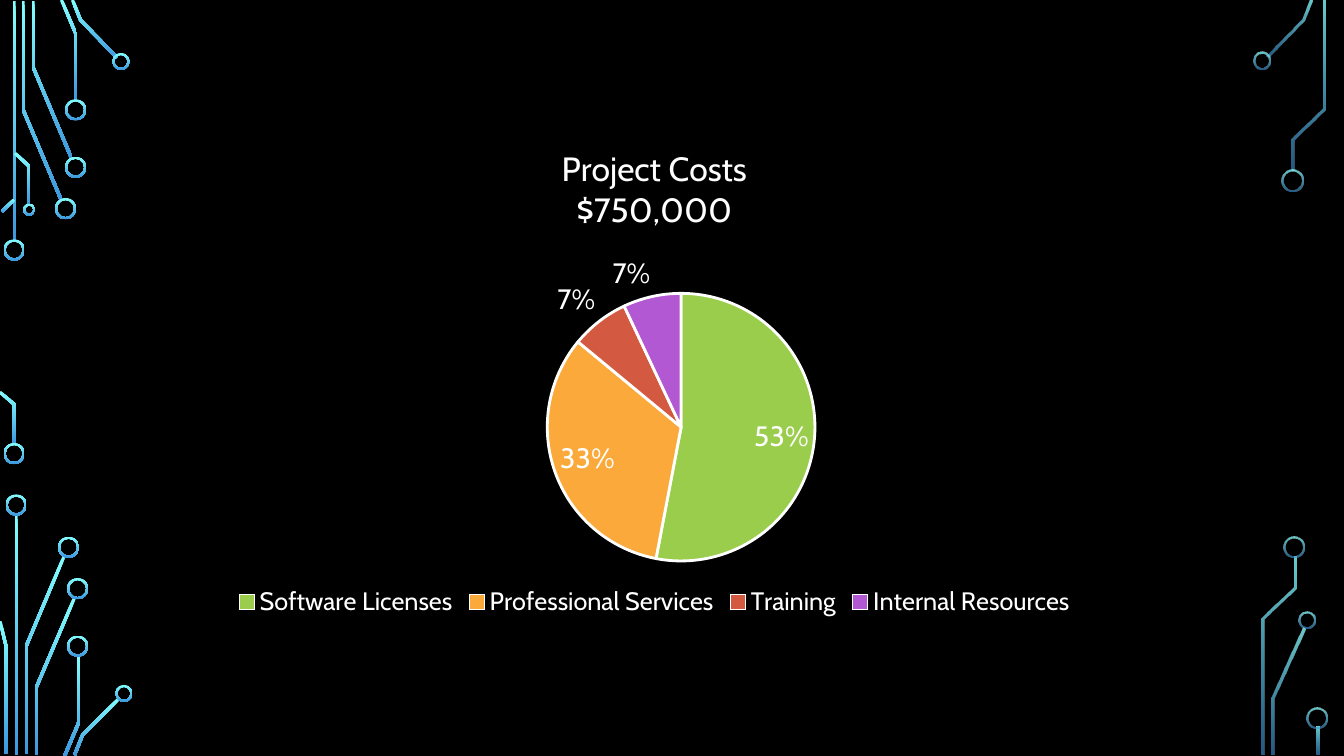
from math import hypot

from pptx import Presentation
from pptx.chart.data import CategoryChartData
from pptx.dml.color import RGBColor
from pptx.enum.chart import XL_CHART_TYPE, XL_LABEL_POSITION, XL_LEGEND_POSITION
from pptx.enum.shapes import MSO_SHAPE
from pptx.oxml import parse_xml
from pptx.oxml.ns import nsdecls, qn
from pptx.util import Inches, Pt

PIE = XL_CHART_TYPE.PIE
BEST_FIT = XL_LABEL_POSITION.BEST_FIT
BOTTOM = XL_LEGEND_POSITION.BOTTOM
DONUT = MSO_SHAPE.DONUT

BLACK = RGBColor(0x00, 0x00, 0x00)
WHITE = RGBColor(0xFF, 0xFF, 0xFF)
CYAN = RGBColor(0x82, 0xFF, 0xFF)
BLUE = RGBColor(0x3D, 0x97, 0xDE)
GREEN = RGBColor(0x9A, 0xCD, 0x4C)
ORANGE = RGBColor(0xFA, 0xA9, 0x3A)
RED = RGBColor(0xD3, 0x59, 0x40)
PURPLE = RGBColor(0xB2, 0x58, 0xD3)

FONT = "Cabin"
TRACE_WIDTH = 0.03
RING_WIDTH = 0.02
OPAQUE = (100, 100)
FADED = (80, 60)

COSTS = [
    ("Software Licenses", 0.53, GREEN),
    ("Professional Services", 0.33, ORANGE),
    ("Training", 0.07, RED),
    ("Internal Resources", 0.07, PURPLE),
]

LEFT_TRACES = [
    [(0.14, 0.01), (0.14, 2.4)],
    [(0.23, 0.01), (0.23, 1.09), (0.61, 1.99)],
    [(0.33, 0.01), (0.33, 0.67), (0.71, 1.57)],
    [(0.61, 0), (0.75, 0.33), (0.75, 1)],
    [(0.72, 0), (0.8, 0.2), (1.16, 0.57)],
    [(0.14, 1.98), (0.02, 2.1)],
    [(0, 3.89), (0.14, 4.01), (0.14, 4.41)],
    [(0.15, 1.52), (0.29, 1.65), (0.29, 2.03)],
    [(0.16, 5.1), (0.16, 7.49)],
    [(0.26, 7.48), (0.26, 6.41), (0.64, 5.51)],
    [(0.06, 7.48), (0.06, 6.41), (0, 6.16)],
    [(0.36, 7.49), (0.36, 6.82), (0.74, 5.93)],
    [(0.64, 7.5), (0.78, 7.17), (0.78, 6.5)],
    [(0.74, 7.49), (0.82, 7.29), (1.18, 6.93)],
]
LEFT_RINGS = [
    (0.14, 2.48, 0.21), (0.14, 4.5, 0.21), (0.65, 2.07, 0.21),
    (0.75, 1.66, 0.21), (0.75, 1.09, 0.21), (1.2, 0.61, 0.17),
    (0.29, 2.08, 0.12), (0.16, 5.01, 0.21), (0.68, 5.43, 0.21),
    (0.77, 5.84, 0.21), (0.77, 6.41, 0.21), (1.23, 6.88, 0.17),
]
RIGHT_TRACES = [
    [(12.57, 0.56), (12.92, 0.2), (13, 0)],
    [(12.63, 7.49), (12.63, 6.93), (12.93, 6.23)],
    [(12.82, 1.69), (12.82, 1.38), (13.13, 1.08), (13.13, 0.01)],
    [(12.53, 7.49), (12.53, 6.14), (12.84, 5.83), (12.84, 5.52)],
    [(13.07, 7.21), (13.07, 7.49)],
]
RIGHT_RINGS = [
    (12.52, 0.6, 0.17), (12.82, 1.79, 0.21), (12.96, 6.15, 0.17),
    (12.83, 5.43, 0.21), (13.06, 7.12, 0.21),
]


def set_font(font, size):
    values = {"name": FONT, "size": Pt(size), "bold": False}
    for name, value in values.items():
        setattr(font, name, value)
    font.color.rgb = WHITE


def paint(shape, opacities):
    shape.shadow.inherit = False
    shape.line.fill.background()
    shape.fill.gradient()
    shape.fill.gradient_angle = 270
    for stop, color, opacity in zip(shape.fill.gradient_stops, (CYAN, BLUE), opacities):
        stop.color.rgb = color
    if opacities != OPAQUE:
        colors = shape._element.spPr.iter(qn("a:srgbClr"))
        for color, opacity in zip(list(colors), opacities):
            color.append(parse_xml(f'<a:alpha {nsdecls("a")} val="{opacity * 1000}"/>'))


def edge_offsets(points):
    normals = []
    for (x1, y1), (x2, y2) in zip(points, points[1:]):
        length = hypot(x2 - x1, y2 - y1)
        normals.append(((y1 - y2) / length, (x2 - x1) / length))
    offsets = []
    for (ax, ay), (bx, by) in zip(normals[:1] + normals, normals + normals[-1:]):
        scale = TRACE_WIDTH / 2 / (1 + ax * bx + ay * by)
        offsets.append(((ax + bx) * scale, (ay + by) * scale))
    return offsets


def add_trace(slide, points, opacities):
    pairs = list(zip(points, edge_offsets(points)))
    outline = [(x + dx, y + dy) for (x, y), (dx, dy) in pairs]
    outline += [(x - dx, y - dy) for (x, y), (dx, dy) in reversed(pairs)]
    corners = [(Inches(x), Inches(y)) for x, y in outline]
    builder = slide.shapes.build_freeform(*corners[0], scale=1.0)
    builder.add_line_segments(corners[1:], close=True)
    paint(builder.convert_to_shape(), opacities)


def add_ring(slide, center_x, center_y, diameter, opacities):
    left, top = center_x - diameter / 2, center_y - diameter / 2
    size = Inches(diameter)
    shape = slide.shapes.add_shape(DONUT, Inches(left), Inches(top), size, size)
    shape.adjustments[0] = RING_WIDTH / diameter
    paint(shape, opacities)


def add_circuit(slide, traces, rings, opacities):
    for points in traces:
        add_trace(slide, points, opacities)
    for ring in rings:
        add_ring(slide, *ring, opacities)


def place_plot(chart, **fractions):
    modes = '<c:layoutTarget val="inner"/><c:xMode val="edge"/><c:yMode val="edge"/>'
    sizes = "".join(f'<c:{name} val="{value}"/>' for name, value in fractions.items())
    plot_area = chart._chartSpace.chart.plotArea
    for layout in plot_area.findall(qn("c:layout")):
        plot_area.remove(layout)
    plot_area.insert(0, parse_xml(
        f'<c:layout {nsdecls("c")}><c:manualLayout>{modes}{sizes}</c:manualLayout></c:layout>'))


def add_title(chart, lines):
    chart.has_title = True
    frame = chart.chart_title.text_frame
    frame.text = "\n".join(lines)
    for paragraph in frame.paragraphs:
        set_font(paragraph.font, 24)
        set_font(paragraph.runs[0].font, 24)
    chart.chart_title.include_in_layout = False


def add_cost_chart(slide):
    data = CategoryChartData(number_format="0%")
    data.categories = [name for name, _, _ in COSTS]
    data.add_series("Series 1", [share for _, share, _ in COSTS])
    chart = slide.shapes.add_chart(
        PIE, Inches(1.18), Inches(1.28), Inches(10.62), Inches(4.89), data).chart
    set_font(chart.font, 10)
    add_title(chart, ["Project Costs", "$750,000"])
    chart.has_legend = True
    chart.legend.position = BOTTOM
    chart.legend.include_in_layout = False
    set_font(chart.legend.font, 18)
    plot = chart.plots[0]
    plot.vary_by_categories = True
    series = plot.series[0]
    for index, (_, _, color) in enumerate(COSTS):
        slice_format = series.points[index].format
        slice_format.fill.solid()
        slice_format.fill.fore_color.rgb = color
        slice_format.line.color.rgb = WHITE
        slice_format.line.width = Pt(2)
    labels = series.data_labels
    values = {"show_value": True, "number_format": "0%",
              "number_format_is_linked": False, "position": BEST_FIT}
    for name, value in values.items():
        setattr(labels, name, value)
    set_font(labels.font, 20)
    place_plot(chart, x=0.4, y=0.33, w=0.25, h=0.55)


def main():
    presentation = Presentation()
    presentation.slide_width = Inches(13.33)
    presentation.slide_height = Inches(7.5)
    slide = presentation.slides.add_slide(presentation.slide_layouts[6])
    slide.background.fill.solid()
    slide.background.fill.fore_color.rgb = BLACK
    add_circuit(slide, LEFT_TRACES, LEFT_RINGS, OPAQUE)
    add_circuit(slide, RIGHT_TRACES, RIGHT_RINGS, FADED)
    add_cost_chart(slide)
    presentation.save("out.pptx")


if __name__ == "__main__":
    main()
